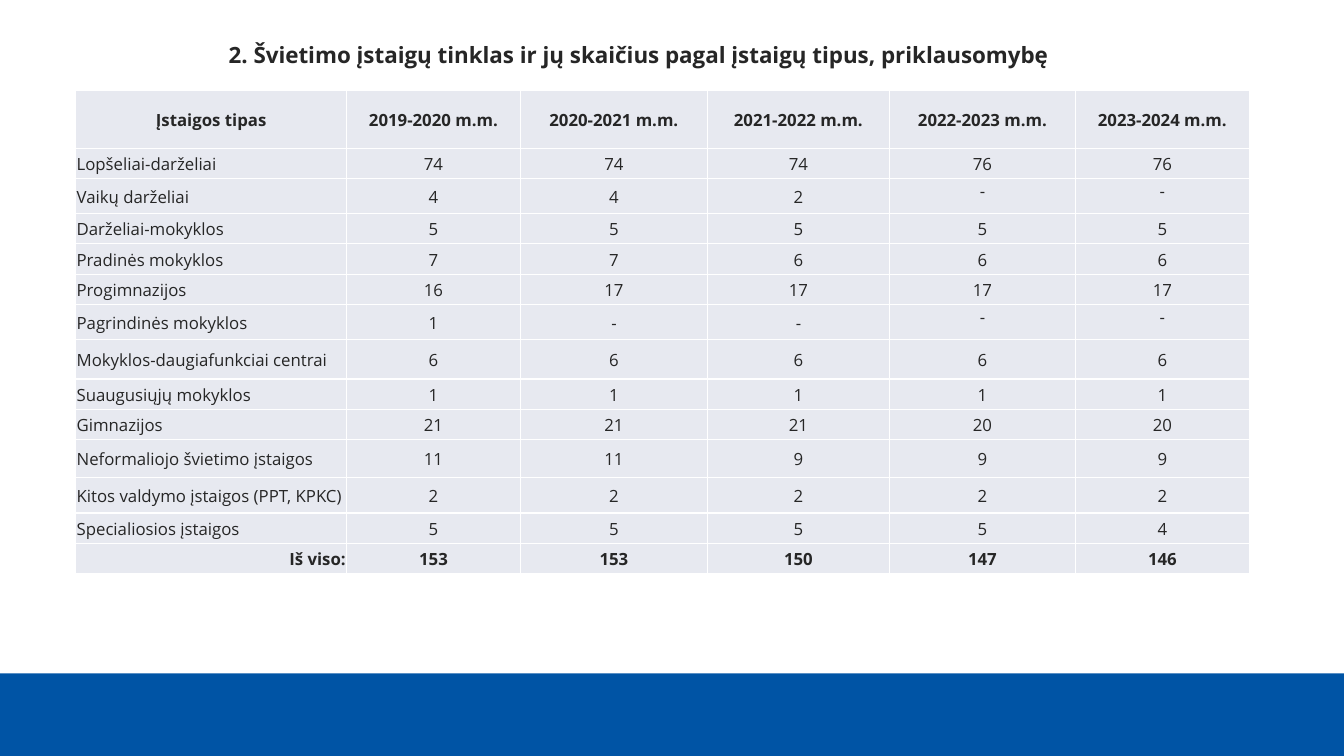
from pptx import Presentation
from pptx.dml.color import RGBColor
from pptx.enum import shapes, text
from pptx.oxml import parse_xml
from pptx.oxml.ns import nsdecls
from pptx.util import Inches, Pt


def rgb(value):
    return RGBColor.from_string(value)


def style(p, size, bold):
    for r in p.runs:
        r.font.name = "Open Sans"
        r.font.size = Pt(size)
        r.font.bold = bold
        r.font.color.rgb = rgb("262626")


prs = Presentation()
prs.slide_width, prs.slide_height = Inches(13.33), Inches(7.5)
s = prs.slides.add_slide(prs.slide_layouts[6])

band = s.shapes.add_shape(shapes.MSO_SHAPE.RECTANGLE, Inches(0), Inches(6.68), Inches(13.33), Inches(0.82))
band.shadow.inherit = False
band.fill.solid()
band.fill.fore_color.rgb = rgb("0054A5")
band.line.fill.background()

title = s.shapes.add_textbox(Inches(2.17), Inches(0.36), Inches(8.43), Inches(0.37))
tf = title.text_frame
tf.word_wrap = False
tf.auto_size = text.MSO_AUTO_SIZE.SHAPE_TO_FIT_TEXT
tf.text = "2. Švietimo įstaigų tinklas ir jų skaičius pagal įstaigų tipus, priklausomybę"
style(tf.paragraphs[0], 16, True)

years = [f"{y}-{y + 1} m.m." for y in range(2019, 2024)]
rows = [
    (0.57, "Įstaigos tipas", years),
    (0.3, "Lopšeliai-darželiai", [74, 74, 74, 76, 76]),
    (0.35, "Vaikų darželiai", [4, 4, 2, "-", "-"]),
    (0.3, "Darželiai-mokyklos", [5, 5, 5, 5, 5]),
    (0.3, "Pradinės mokyklos", [7, 7, 6, 6, 6]),
    (0.3, "Progimnazijos", [16, 17, 17, 17, 17]),
    (0.35, "Pagrindinės mokyklos", [1, "-", "-", "-", "-"]),
    (0.39, "Mokyklos-daugiafunkciai centrai", [6, 6, 6, 6, 6]),
    (0.3, "Suaugusiųjų mokyklos", [1, 1, 1, 1, 1]),
    (0.3, "Gimnazijos", [21, 21, 21, 20, 20]),
    (0.38, "Neformaliojo švietimo įstaigos", [11, 11, 9, 9, 9]),
    (0.35, "Kitos valdymo įstaigos (PPT, KPKC)", [2, 2, 2, 2, 2]),
    (0.3, "Specialiosios įstaigos", [5, 5, 5, 5, 4]),
    (0.3, "Iš viso:", [153, 153, 150, 147, 146]),
]
widths = [2.69, 1.72, 1.86, 1.8, 1.85, 1.72]
last = len(rows) - 1
first_column = {0: text.PP_ALIGN.CENTER, last: text.PP_ALIGN.RIGHT}

table = s.shapes.add_table(len(rows), len(widths), Inches(0.75), Inches(0.9), Inches(11.65), Inches(4.81)).table
for column, width in zip(table.columns, widths):
    column.width = Inches(width)

for i, (height, name, values) in enumerate(rows):
    table.rows[i].height = Inches(height)
    for j, value in enumerate([name, *values]):
        cell = table.cell(i, j)
        cell.margin_left = cell.margin_right = cell.margin_top = Inches(0.01)
        cell.margin_bottom = Inches(0)
        top = value == "-" and j >= 4
        cell.vertical_anchor = text.MSO_ANCHOR.TOP if top else text.MSO_ANCHOR.MIDDLE
        tcPr = cell._tc.get_or_add_tcPr()
        for side in ("lnL", "lnR", "lnT", "lnB"):
            tcPr.append(parse_xml(
                f'<a:{side} {nsdecls("a")} w="12700"><a:solidFill>'
                f'<a:srgbClr val="FFFFFF"/></a:solidFill></a:{side}>'))
        cell.fill.solid()
        cell.fill.fore_color.rgb = rgb("E7E9F0")
        cell.text_frame.text = str(value)
        p = cell.text_frame.paragraphs[0]
        p.alignment = text.PP_ALIGN.CENTER if j else first_column.get(i, text.PP_ALIGN.LEFT)
        style(p, 12, i in (0, last))

prs.save("out.pptx")
